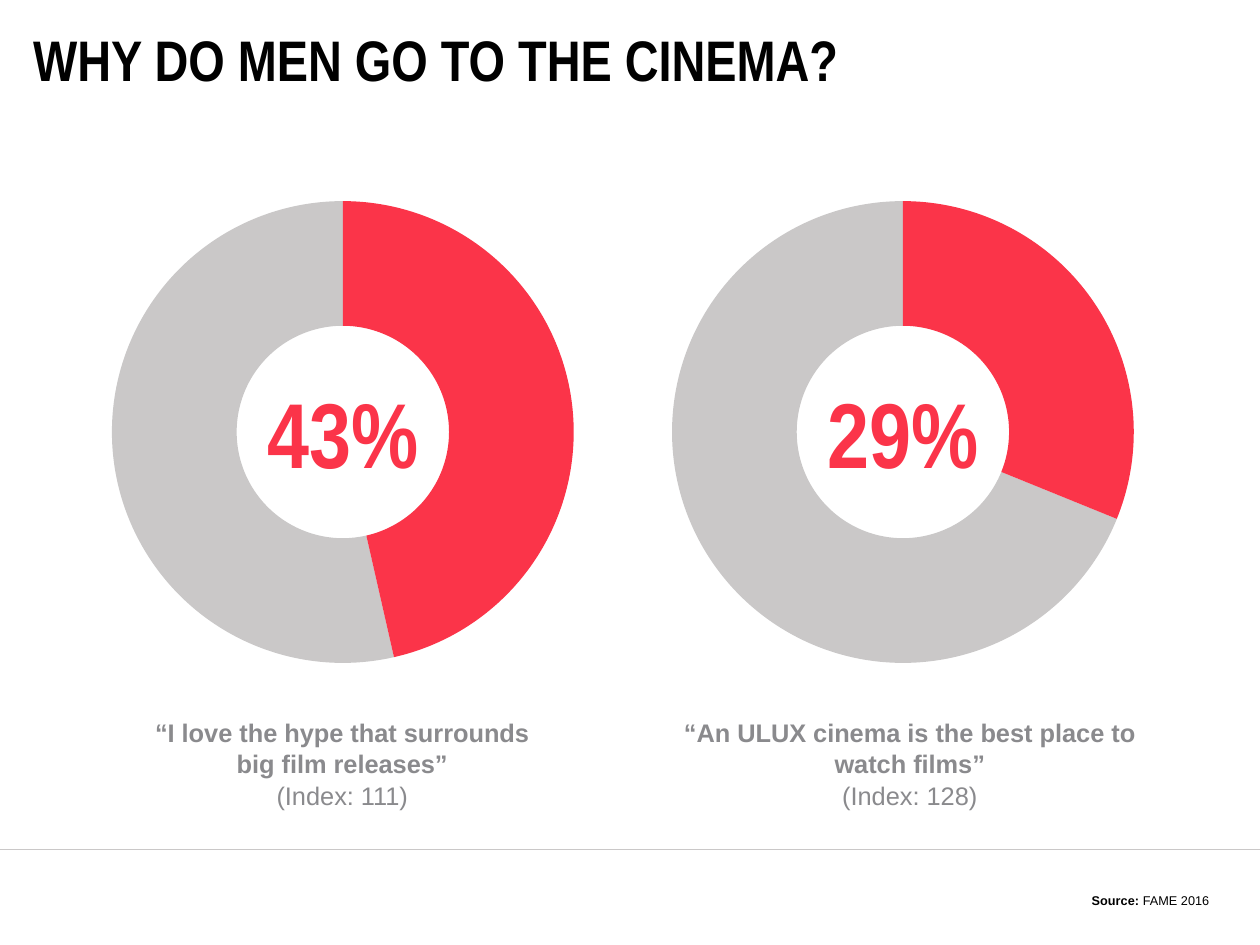
import pptx
import pptx.dml.color
import pptx.enum.shapes
import pptx.enum.text
import pptx.oxml
import pptx.util

Inches = pptx.util.Inches
Pt = pptx.util.Pt
ALIGN = pptx.enum.text.PP_ALIGN
ANCHOR = pptx.enum.text.MSO_ANCHOR
COLORS = {"red": "FB3449", "ring": "CAC8C8", "caption": "8A8A8D", "black": "000000"}
RING_SIZE, RING_TOP, RING_THICKNESS = 4.04, 1.76, 0.27
TOP_ANGLE = 270


def rgb(name):
    return pptx.dml.color.RGBColor.from_string(COLORS[name])


def add_text(box, paragraphs, align, anchor, size, font, color, spacing=None):
    """Fill a shape with paragraphs, each a list of (text, bold) runs."""
    frame = box.text_frame
    frame.word_wrap = True
    frame.vertical_anchor = anchor
    for index, runs in enumerate(paragraphs):
        paragraph = frame.paragraphs[0] if index == 0 else frame.add_paragraph()
        paragraph.alignment = align
        if spacing:
            paragraph.line_spacing = Pt(spacing)
        for text, bold in runs:
            run = paragraph.add_run()
            run.text = text
            for key, value in {"size": Pt(size), "name": font, "bold": bold}.items():
                setattr(run.font, key, value)
            run.font.color.rgb = rgb(color)


deck = pptx.Presentation()
# The page is metric: 28 by 21 cm
deck.slide_width = pptx.util.Cm(28)
deck.slide_height = pptx.util.Cm(21)
slide = deck.slides.add_slide(deck.slide_layouts[5])
shapes = slide.shapes

footer_rule = shapes.add_connector(
    pptx.enum.shapes.MSO_CONNECTOR.STRAIGHT,
    0, Inches(7.43), deck.slide_width, Inches(7.43))
footer_rule.line.color.rgb = rgb("ring")
footer_rule.line.width = Pt(0.5)
footer_rule._element.spPr.append(pptx.oxml.parse_xml(
    '<a:effectLst xmlns:a="http://schemas.openxmlformats.org/drawingml/2006/main"/>'))

title = shapes.title
title.left, title.top, title.width, title.height = map(Inches, (0.29, 0.29, 10.18, 0.45))
add_text(title, [[("WHY DO MEN GO TO THE CINEMA?", True)]],
         ALIGN.LEFT, ANCHOR.MIDDLE, 36, "Arial Narrow", "black")
title.text_frame.word_wrap = False
title.text_frame.auto_size = pptx.enum.text.MSO_AUTO_SIZE.NONE
for side in ("left", "top", "right", "bottom"):
    setattr(title.text_frame, f"margin_{side}", 0)

# Ring left, angle where red ends, share, quote, index, caption left and width
reasons = [
    (0.98, 77.2, "43%", "“I love the hype that surrounds big film releases”",
     "(Index: 111)", 1.18, 3.63),
    (5.88, 22.1, "29%", "“An ULUX cinema is the best place to watch films”",
     "(Index: 128)", 5.8, 4.32),
]
for ring_left, red_end, share, quote, index_note, caption_left, caption_width in reasons:
    for color, start, end in (("ring", red_end, TOP_ANGLE), ("red", TOP_ANGLE, red_end)):
        arc = shapes.add_shape(
            pptx.enum.shapes.MSO_SHAPE.BLOCK_ARC, Inches(ring_left), Inches(RING_TOP),
            Inches(RING_SIZE), Inches(RING_SIZE))
        # Angles are stored in 60000ths of a degree, adjustments in 100000ths
        arc.adjustments[0] = start * 0.6
        arc.adjustments[1] = end * 0.6
        arc.adjustments[2] = RING_THICKNESS
        arc.shadow.inherit = False
        arc.fill.solid()
        arc.fill.fore_color.rgb = rgb(color)
        arc.line.fill.background()

    share_box = shapes.add_textbox(
        Inches(ring_left + 0.91), Inches(3.24), Inches(2.22), Inches(1.08))
    add_text(share_box, [[(share, True)]],
             ALIGN.CENTER, ANCHOR.MIDDLE, 58, "Arial Narrow", "red")

    caption = shapes.add_textbox(
        Inches(caption_left), Inches(6.21), Inches(caption_width), Inches(0.94))
    add_text(caption, [[(quote, True)], [(index_note, False)]],
             ALIGN.CENTER, ANCHOR.TOP, 16, "Arial", "caption", spacing=20)

source = shapes.add_textbox(Inches(4.81), Inches(7.75), Inches(5.87), Inches(0.24))
add_text(source, [[("Source: ", True), ("FAME 2016", False)]],
         ALIGN.RIGHT, ANCHOR.BOTTOM, 8, "Arial", "black")

deck.save("out.pptx")
